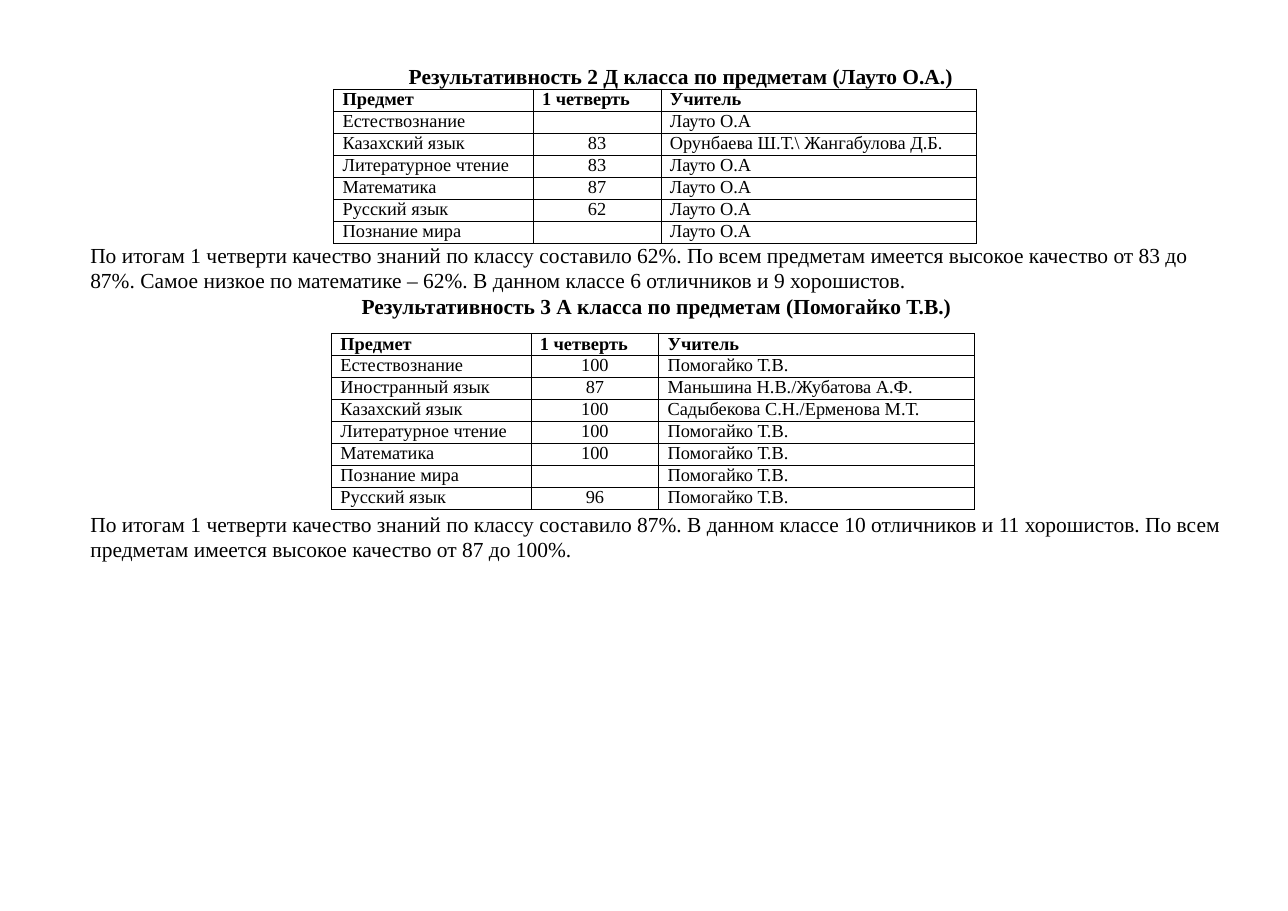
import pptx
import pptx.dml.color
import pptx.enum.text
import pptx.oxml
import pptx.oxml.ns
import pptx.util
from pptx.util import Inches

FONT = "Times New Roman"
BLACK, WHITE = "000000", "FFFFFF"
ALIGN = pptx.enum.text.PP_ALIGN
COLUMNS = (1.81, 1.16, 2.86)
HEADER = ("Предмет", "1 четверть", "Учитель")

CLASS_2D = [
    ("Естествознание", "", "Лауто О.А"),
    ("Казахский язык", "83", "Орунбаева Ш.Т.\\ Жангабулова Д.Б."),
    ("Литературное чтение", "83", "Лауто О.А"),
    ("Математика", "87", "Лауто О.А"),
    ("Русский язык", "62", "Лауто О.А"),
    ("Познание мира", "", "Лауто О.А"),
]
CLASS_3A = [
    ("Естествознание", "100", "Помогайко Т.В."),
    ("Иностранный язык", "87", "Маньшина Н.В./Жубатова А.Ф."),
    ("Казахский язык", "100", "Садыбекова С.Н./Ерменова М.Т."),
    ("Литературное чтение", "100", "Помогайко Т.В."),
    ("Математика", "100", "Помогайко Т.В."),
    ("Познание мира", "", "Помогайко Т.В."),
    ("Русский язык", "96", "Помогайко Т.В."),
]
SUMMARY_2D = (
    "По итогам 1 четверти качество знаний по классу составило 62%. "
    "По всем предметам имеется высокое качество от 83 до 87%. "
    "Самое низкое по математике – 62%. В данном классе 6 отличников и 9 хорошистов."
)
SUMMARY_3A = (
    "По итогам 1 четверти качество знаний по классу составило 87%. "
    "В данном классе 10 отличников и 11 хорошистов. "
    "По всем предметам имеется высокое качество от 87 до 100%."
)


def color(value):
    return pptx.dml.color.RGBColor.from_string(value)


def apply(target, formats):
    for name, value in formats.items():
        setattr(target, name, value)


def write(para, text, size, bold=False, indent=0.0, **formats):
    """Put one formatted run into a paragraph."""
    apply(para, formats)
    para._p.get_or_add_pPr().set("marL", str(Inches(indent)))
    para._p.get_or_add_pPr().set("indent", "0")
    if not text:  # keeps an empty cell as low as its row
        para._p.get_or_add_endParaRPr().set("sz", str(size * 100))
        return
    span = para.add_run()
    span.text = text
    apply(span.font, {"name": FONT, "size": pptx.util.Pt(size), "bold": bold})
    span.font.color.rgb = color(BLACK)


def set_frame(frame, top):
    apply(frame, {
        "margin_left": 0, "margin_right": 0, "margin_bottom": 0,
        "margin_top": Inches(top), "word_wrap": True,
        "auto_size": pptx.enum.text.MSO_AUTO_SIZE.NONE,
        "vertical_anchor": pptx.enum.text.MSO_ANCHOR.TOP,
    })


def add_title(page, text):
    title = page.shapes.title
    apply(title, {"left": Inches(3.7), "top": Inches(0.56),
                  "width": Inches(5.1), "height": Inches(0.26)})
    set_frame(title.text_frame, 0.01)
    write(title.text_frame.paragraphs[0], text, 14, True, 0.01, alignment=ALIGN.LEFT,
          line_spacing=1.0, space_before=pptx.util.Pt(0.9))


def add_summary(page, top, width, height, text, heading=None):
    box = page.shapes.add_textbox(Inches(0.81), Inches(top), Inches(width), Inches(height))
    set_frame(box.text_frame, 0.03)
    write(box.text_frame.paragraphs[0], text, 14, indent=0.01,
          line_spacing=pptx.util.Pt(16.1), space_before=pptx.util.Pt(2))
    if heading:
        write(box.text_frame.add_paragraph(), heading, 14, True, 0.07,
              alignment=ALIGN.CENTER)


def add_borders(cell):
    properties = cell._tc.get_or_add_tcPr()
    for position, side in enumerate(("lnL", "lnR", "lnT", "lnB")):
        properties.insert(position, pptx.oxml.parse_xml(
            f'<a:{side} {pptx.oxml.ns.nsdecls("a")} w="{pptx.util.Pt(0.5)}">'
            f'<a:solidFill><a:srgbClr val="{BLACK}"/></a:solidFill></a:{side}>'))


def add_results(page, left, top, height, results):
    rows = [HEADER, *results]
    table = page.shapes.add_table(len(rows), len(COLUMNS), Inches(left), Inches(top),
                                  Inches(sum(COLUMNS)), Inches(height)).table
    apply(table, {"first_row": False, "horz_banding": False})
    for column, width in zip(table.columns, COLUMNS):
        column.width = Inches(width)
    for r, values in enumerate(rows):
        table.rows[r].height = Inches(height / len(rows))
        for c, value in enumerate(values):
            cell = table.cell(r, c)
            apply(cell, {"margin_left": 0, "margin_right": 0,
                         "margin_top": 0, "margin_bottom": 0})
            cell.fill.solid()
            cell.fill.fore_color.rgb = color(WHITE)
            add_borders(cell)
            centered = r > 0 and c == 1
            write(cell.text_frame.paragraphs[0], value, 12, r == 0,
                  0 if centered else 0.08,
                  alignment=ALIGN.CENTER if centered else ALIGN.LEFT,
                  line_spacing=pptx.util.Pt(13.3))


def main():
    deck = pptx.Presentation()
    apply(deck, {"slide_width": Inches(11.69), "slide_height": Inches(8.27)})
    page = deck.slides.add_slide(deck.slide_layouts[5])

    # Class 2 Д
    add_title(page, "Результативность 2 Д класса по предметам (Лауто О.А.)")
    add_results(page, 3.03, 0.81, 1.39, CLASS_2D)
    add_summary(page, 2.18, 10.23, 0.71, SUMMARY_2D,
                "Результативность 3 А класса по предметам (Помогайко Т.В.)")

    # Class 3 А
    add_results(page, 3.01, 3.03, 1.59, CLASS_3A)
    add_summary(page, 4.62, 10.35, 0.48, SUMMARY_3A)

    deck.save("out.pptx")


if __name__ == "__main__":
    main()
